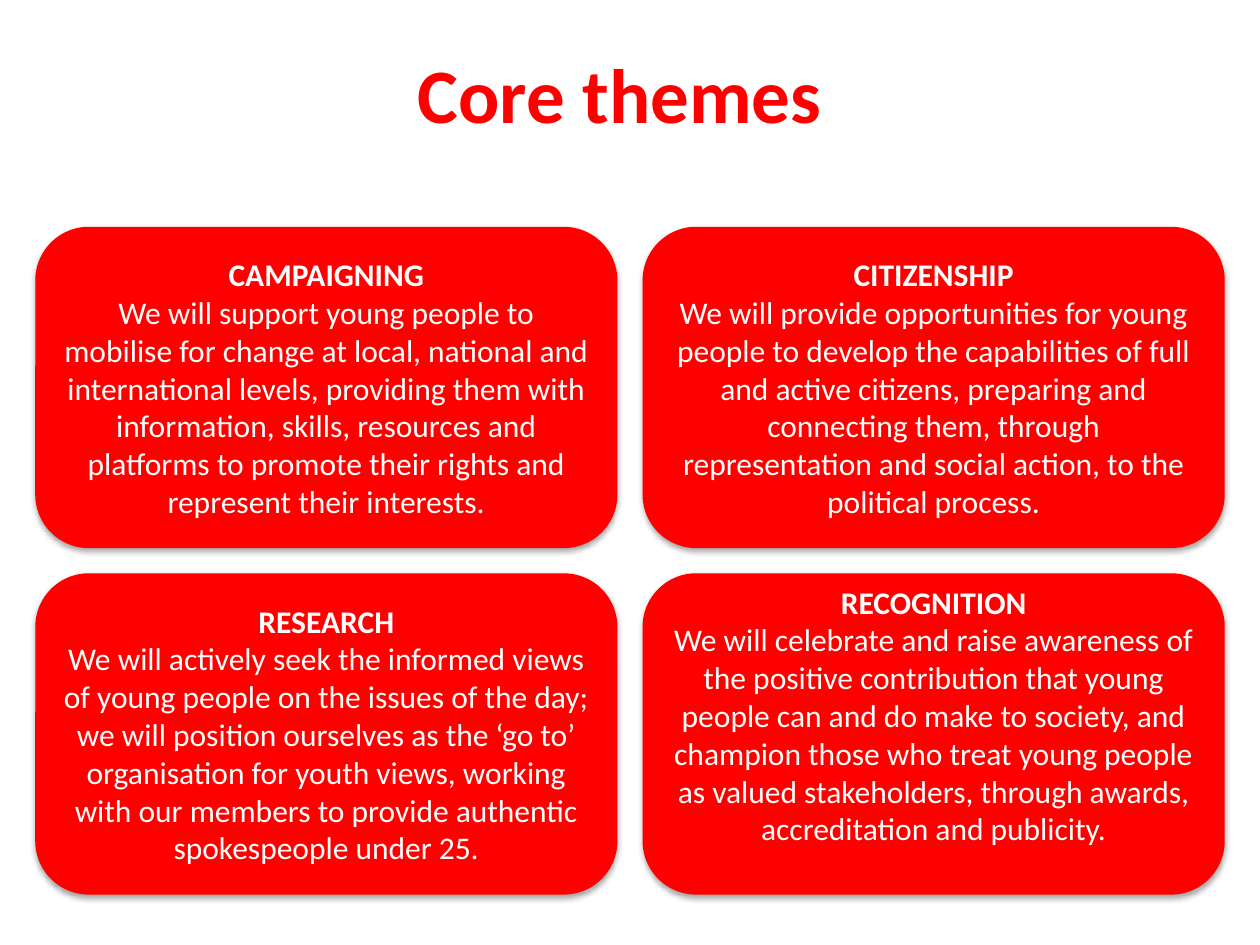
import pptx
import pptx.util
import pptx.dml.color
import pptx.enum.shapes
import pptx.enum.text
import pptx.oxml
import pptx.oxml.ns

COLORS = {"theme": "FF0000", "text": "FFFFFF", "shadow": "000000"}
TITLE_FONT = {"name": "Calibri", "size": pptx.util.Pt(44), "bold": True}
HEAD_FONT = {"name": "Calibri", "size": pptx.util.Pt(18), "bold": True}
BODY_FONT = {**HEAD_FONT, "bold": False}
FRAME = {"word_wrap": True, "vertical_anchor": pptx.enum.text.MSO_ANCHOR.MIDDLE}

THEMES = [
    ("CAMPAIGNING",
     "We will support young people to mobilise for change at local, national and "
     "international levels, providing them with information, skills, resources and "
     "platforms to promote their rights and represent their interests.", 0.05),
    ("CITIZENSHIP",
     "We will provide opportunities for young people to develop the capabilities of "
     "full and active citizens, preparing and connecting them, through "
     "representation and social action, to the political process.", 0.05),
    ("RESEARCH",
     "We will actively seek the informed views of young people on the issues of the "
     "day; we will position ourselves as the ‘go to’ organisation for youth views, "
     "working with our members to provide authentic spokespeople under 25.", 0.05),
    ("RECOGNITION",
     "We will celebrate and raise awareness of the positive contribution that young "
     "people can and do make to society, and champion those who treat young people "
     "as valued stakeholders, through awards, accreditation and publicity.", 0.35),
]


def set_attrs(obj, values):
    """Set each named attribute of an object."""
    for name, value in values.items():
        setattr(obj, name, value)


def rgb(key):
    """Return the named colour."""
    return pptx.dml.color.RGBColor.from_string(COLORS[key])


def write(p, text, font, color):
    """Fill a centred paragraph with one formatted run."""
    p.alignment = pptx.enum.text.PP_ALIGN.CENTER
    r = p.add_run()
    r.text = text
    set_attrs(r.font, font)
    r.font.color.rgb = rgb(color)


def add_shadow(sp):
    """Give a shape a soft shadow straight below it."""
    sp.shadow.inherit = False
    effects = sp._element.spPr.find(pptx.oxml.ns.qn("a:effectLst"))
    effects.append(pptx.oxml.parse_xml(
        f'<a:outerShdw {pptx.oxml.ns.nsdecls("a")} blurRad="39370" dist="22860" '
        f'dir="5400000" rotWithShape="0"><a:srgbClr val="{COLORS["shadow"]}">'
        '<a:alpha val="35000"/></a:srgbClr></a:outerShdw>'))


def add_title(s, box, text):
    """Place the slide heading in its box."""
    tf = s.shapes.add_textbox(*box).text_frame
    set_attrs(tf, FRAME)
    write(tf.paragraphs[0], text, TITLE_FONT, "theme")


def add_card(s, box, head, body, bottom):
    """Place one rounded card with a heading and its text."""
    sp = s.shapes.add_shape(pptx.enum.shapes.MSO_SHAPE.ROUNDED_RECTANGLE, *box)
    sp.fill.solid()
    sp.fill.fore_color.rgb = rgb("theme")
    sp.line.fill.background()
    add_shadow(sp)
    tf = sp.text_frame
    set_attrs(tf, {**FRAME, "margin_bottom": pptx.util.Inches(bottom)})
    write(tf.paragraphs[0], head, HEAD_FONT, "text")
    write(tf.add_paragraph(), body, BODY_FONT, "text")


def add_cards(s, box, themes, columns=2):
    """Lay the theme cards out on an even grid inside the box."""
    left, top, width, height = box
    gap = pptx.util.Inches(0.2)
    rows = -(-len(themes) // columns)
    w = (width - gap * (columns - 1)) // columns
    h = (height - gap * (rows - 1)) // rows
    for i, theme in enumerate(themes):
        row, col = divmod(i, columns)
        add_card(s, (left + col * (w + gap), top + row * (h + gap), w, h), *theme)


def main():
    """Build the slide and save it."""
    prs = pptx.Presentation()
    set_attrs(prs, {"slide_width": pptx.util.Inches(10),
                    "slide_height": pptx.util.Inches(7.5)})
    s = prs.slides.add_slide(prs.slide_layouts[6])
    add_title(s, [pptx.util.Inches(v) for v in (0.42, 0.11, 9, 1.25)], "Core themes")
    add_cards(s, [pptx.util.Inches(v) for v in (0.28, 1.8, 9.44, 5.3)], THEMES)
    prs.save("out.pptx")


if __name__ == "__main__":
    main()
